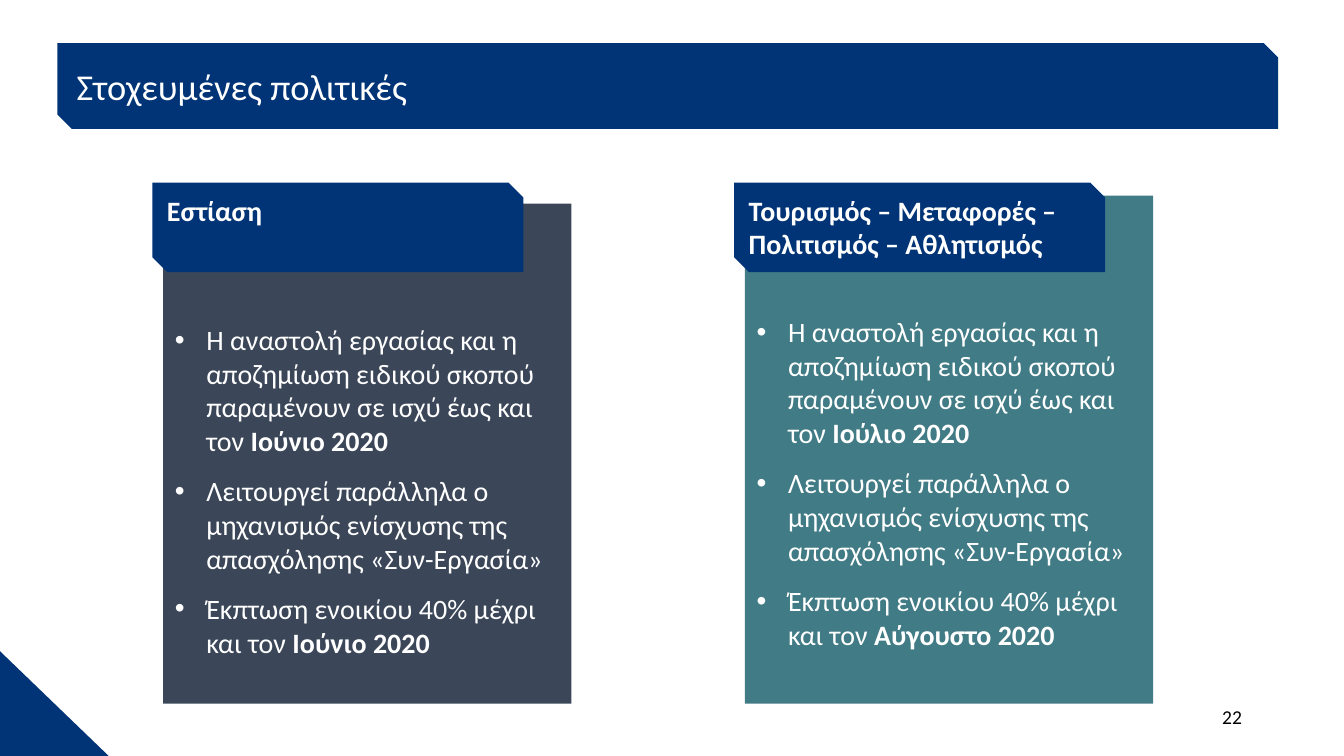
from dataclasses import dataclass

from lxml.etree import SubElement
from pptx import Presentation
from pptx.dml.color import RGBColor
from pptx.enum.shapes import MSO_SHAPE
from pptx.enum.text import MSO_ANCHOR, PP_ALIGN
from pptx.oxml.ns import qn
from pptx.util import Cm, Pt


@dataclass(frozen=True)
class Theme:
    font: str = "Calibri"
    navy: str = "013476"
    slate: str = "3B4759"
    teal: str = "417B85"
    white: str = "FFFFFF"
    black: str = "000000"
    title: int = 26
    body: int = 20
    number: int = 14


theme = Theme()


def add_box(kind, x, y, w, h, fill, insets=(0, 0, 0, 0), anchor=MSO_ANCHOR.TOP):
    sp = slide.shapes.add_shape(kind, Cm(x), Cm(y), Cm(w), Cm(h))
    sp.shadow.inherit = False
    sp.fill.solid()
    sp.fill.fore_color.rgb = RGBColor.from_string(fill)
    sp.line.fill.background()
    tf = sp.text_frame
    tf.word_wrap = True
    tf.vertical_anchor = anchor
    tf.margin_left, tf.margin_top, tf.margin_right, tf.margin_bottom = map(Cm, insets)
    return tf


def add_text(p, text, size, color=theme.white, bold=False, align=PP_ALIGN.LEFT):
    p.alignment = align
    r = p.add_run()
    r.text = text
    r.font.name = theme.font
    r.font.size = Pt(size)
    r.font.bold = bold
    r.font.color.rgb = RGBColor.from_string(color)


prs = Presentation()
prs.slide_width, prs.slide_height = Cm(33.87), Cm(19.05)
slide = prs.slides.add_slide(prs.slide_layouts[6])

add_box(MSO_SHAPE.RIGHT_TRIANGLE, 0, 16.41, 2.74, 2.64, theme.navy)

tf = add_box(MSO_SHAPE.SNIP_2_DIAG_RECTANGLE, 1.45, 1.09, 30.76, 2.16, theme.navy,
             (0.3, 0.05, 0.3, 0.05), MSO_ANCHOR.MIDDLE)
add_text(tf.paragraphs[0], "Στοχευμένες πολιτικές", theme.title)

cards = [
    ("Εστίαση", 4.11, 5.13, theme.slate, "Ιούνιο 2020", "Ιούνιο 2020"),
    ("Τουρισμός – Μεταφορές – Πολιτισμός – Αθλητισμός", 18.77, 4.93, theme.teal,
     "Ιούλιο 2020", "Αύγουστο 2020"),
]
card_bottom = 17.73

for heading, x, y, fill, support_end, rent_end in cards:
    tf = add_box(MSO_SHAPE.RECTANGLE, x, y, 10.29, card_bottom - y, fill,
                 (0.3, 3, 0.2, 0.1))
    bullets = [
        ("Η αναστολή εργασίας και η αποζημίωση ειδικού σκοπού παραμένουν "
         "σε ισχύ έως και τον ", support_end),
        ("Λειτουργεί παράλληλα ο μηχανισμός ενίσχυσης της απασχόλησης "
         "«Συν-Εργασία»", ""),
        ("Έκπτωση ενοικίου 40% μέχρι και τον ", rent_end),
    ]
    for i, (text, deadline) in enumerate(bullets):
        p = tf.add_paragraph() if i else tf.paragraphs[0]
        p.space_before = Pt(6 if i else 0)
        p.space_after = Pt(6)
        pPr = p._p.get_or_add_pPr()
        pPr.set("marL", str(Cm(0.79)))
        pPr.set("indent", str(-Cm(0.79)))
        color = SubElement(SubElement(pPr, qn("a:buClr")), qn("a:srgbClr"))
        color.set("val", theme.white)
        SubElement(pPr, qn("a:buFont")).set("typeface", "Arial")
        SubElement(pPr, qn("a:buChar")).set("char", "•")
        add_text(p, text, theme.body)
        if deadline:
            add_text(p, deadline, theme.body, bold=True)

    tf = add_box(MSO_SHAPE.SNIP_2_DIAG_RECTANGLE, x - 0.27, 4.6, 9.35, 2.26, theme.navy,
                 (0.18, 0.08, 0.18, 0.08))
    add_text(tf.paragraphs[0], heading, theme.body, bold=True)

tf = slide.shapes.add_textbox(Cm(23.93), Cm(17.65), Cm(7.62), Cm(1.02)).text_frame
tf.word_wrap = True
add_text(tf.paragraphs[0], "22", theme.number, theme.black, align=PP_ALIGN.RIGHT)

prs.save("out.pptx")
